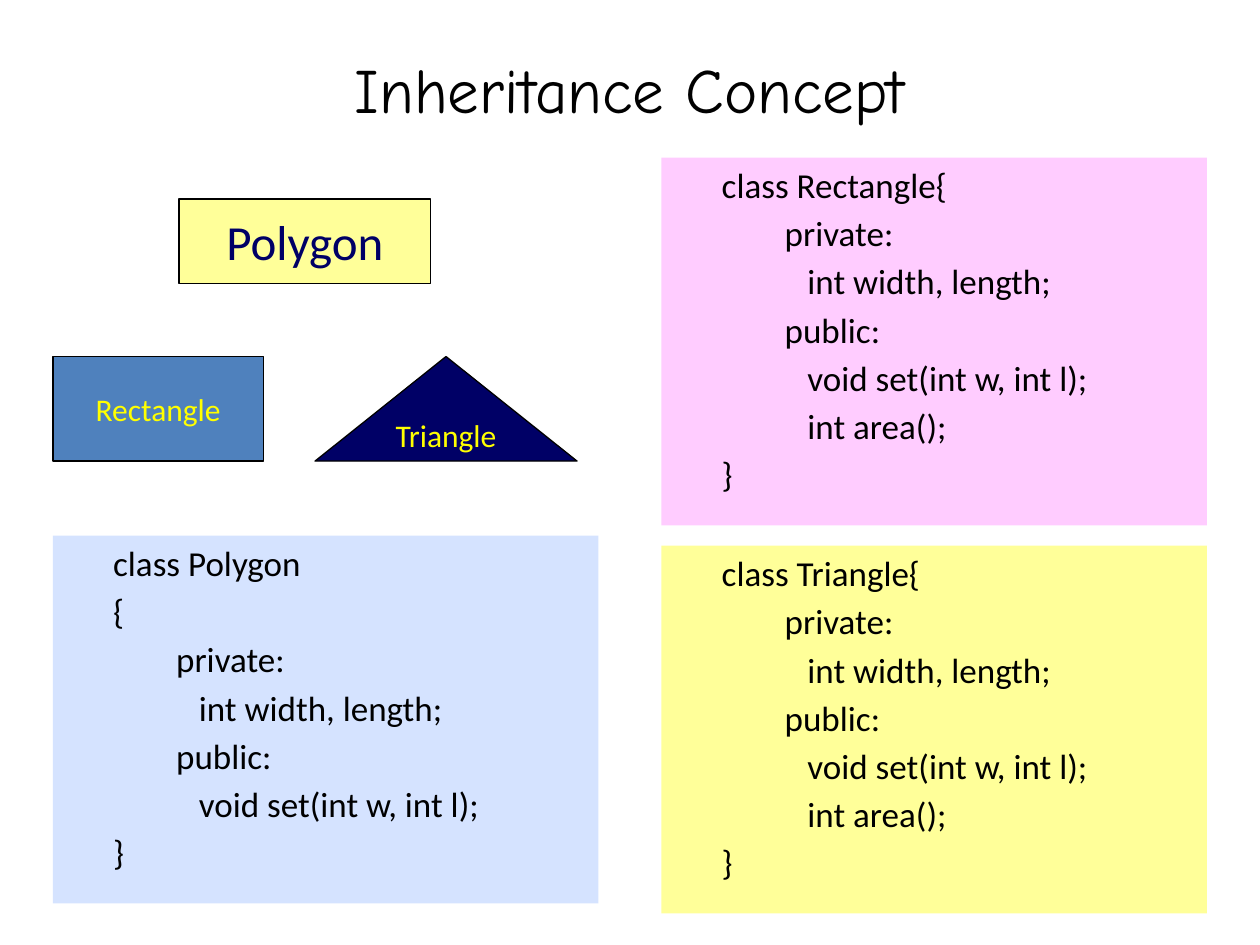
"""Build the Inheritance Concept slide with class shapes and code panels."""

from pptx import Presentation
from pptx.dml.color import RGBColor
from pptx.enum.shapes import MSO_SHAPE as Shape
from pptx.enum.text import MSO_ANCHOR as Anchor, MSO_AUTO_SIZE as AutoSize, PP_ALIGN as Align
from pptx.util import Inches, Pt

BLACK = RGBColor(0x00, 0x00, 0x00)
NAVY = RGBColor(0x00, 0x00, 0x66)
BLUE = RGBColor(0x4F, 0x81, 0xBD)
YELLOW = RGBColor(0xFF, 0xFF, 0x00)
CREAM = RGBColor(0xFF, 0xFF, 0x99)
PINK = RGBColor(0xFF, 0xCC, 0xFF)
PALE_BLUE = RGBColor(0xD5, 0xE3, 0xFF)

TITLE = "Inheritance Concept"
LEFT, RIGHT = 0.42, 5.25
PANEL_SIZE = (4.33, 2.92)
CODE_INDENTS = (0.38, 0.88, 1.06)

FIGURES = [
    ("Rectangle", Shape.RECTANGLE, (LEFT, 2.83, 1.67, 0.83), BLUE, YELLOW, 18),
    ("Triangle", Shape.ISOSCELES_TRIANGLE, (2.5, 2.83, 2.08, 0.83), NAVY, YELLOW, 18),
    ("Polygon", Shape.RECTANGLE, (1.42, 1.58, 2, 0.67), CREAM, NAVY, 28),
]

MEMBERS = [
    (1, "private:"),
    (2, "int width, length;"),
    (1, "public:"),
    (2, "void set(int w, int l);"),
]
AREA = (2, "int area();")
END = (0, "}")

PANELS = [
    ((LEFT, 4.25), PALE_BLUE, [(0, "class Polygon"), (0, "{"), *MEMBERS, END]),
    ((RIGHT, 1.25), PINK, [(0, "class Rectangle{"), *MEMBERS, AREA, END]),
    ((RIGHT, 4.33), CREAM, [(0, "class Triangle{"), *MEMBERS, AREA, END]),
]


def write(frame, lines, *, size, color=BLACK, font="Calibri", align=Align.CENTER,
          anchor=Anchor.MIDDLE, wrap=True, indents=(0,), before=0):
    frame.auto_size = AutoSize.NONE
    frame.word_wrap = wrap
    frame.vertical_anchor = anchor
    for index, (level, text) in enumerate(lines):
        para = frame.paragraphs[0] if index == 0 else frame.add_paragraph()
        para.alignment = align
        para.space_before = Pt(before)
        para._p.get_or_add_pPr().set("marL", str(Inches(indents[level])))
        span = para.add_run()
        span.text = text
        span.font.name = font
        span.font.size = Pt(size)
        span.font.color.rgb = color


def add_box(page, kind, bounds, fill, outline=None):
    box = page.shapes.add_shape(kind, *map(Inches, bounds))
    box.shadow.inherit = False
    box.fill.solid()
    box.fill.fore_color.rgb = fill
    if outline is None:
        box.line.fill.background()
    else:
        box.line.color.rgb = outline
        box.line.width = Pt(0.75)
    return box


def main():
    deck = Presentation()
    deck.slide_width, deck.slide_height = Inches(10), Inches(7.5)
    page = deck.slides.add_slide(deck.slide_layouts[5])

    title = page.shapes.title
    title.left, title.top, title.width, title.height = map(Inches, (0.75, 0.33, 8.5, 0.75))
    write(title.text_frame, [(0, TITLE)], size=36, font="Comic Neue")

    for name, kind, bounds, fill, color, size in FIGURES:
        box = add_box(page, kind, bounds, fill, BLACK)
        write(box.text_frame, [(0, name)], size=size, color=color, wrap=False)

    for corner, fill, code in PANELS:
        box = add_box(page, Shape.RECTANGLE, corner + PANEL_SIZE, fill)
        write(box.text_frame, code, size=20, align=Align.LEFT, anchor=Anchor.TOP,
              indents=CODE_INDENTS, before=3.5)

    deck.save("out.pptx")


if __name__ == "__main__":
    main()
